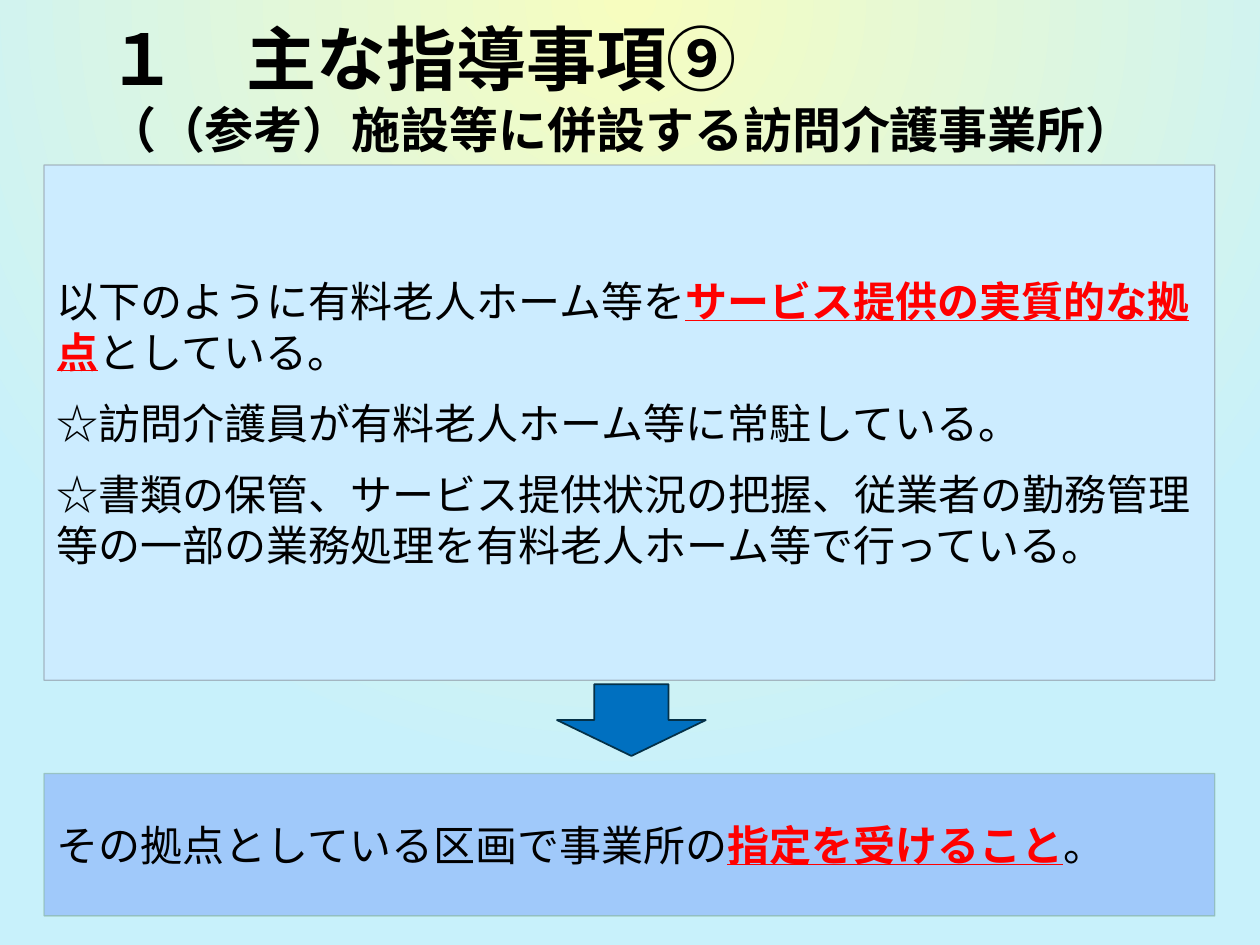
from pptx import Presentation
from pptx.dml.color import RGBColor
from pptx.enum.shapes import MSO_SHAPE as Shape
from pptx.enum.text import MSO_ANCHOR as Anchor, MSO_AUTO_SIZE as Fit, PP_ALIGN as Align
from pptx.oxml.ns import qn
from pptx.util import Pt
from lxml.etree import SubElement as sub

FONT = "League Spartan"
HEX = {
    "ink": "000000", "key": "FF0000",
    "glow": "F7FDBF", "sky": "C8F1FB",
    "pale": "CCECFF", "pale_edge": "89919C",
    "blue": "A0C9FA", "blue_edge": "8AB7A1",
    "arrow": "0070C0", "arrow_edge": "043148",
}
LEFT, WIDTH = 25.2, 669

# Each paragraph is a list of (text, is key phrase).
CAUSE = [
    [("以下のように有料老人ホーム等を", False),
     ("サービス提供の実質的な拠点", True),
     ("としている。", False)],
    [("☆訪問介護員が有料老人ホーム等に常駐している。", False)],
    [("☆書類の保管、サービス提供状況の把握、従業者の勤務管理"
      "等の一部の業務処理を有料老人ホーム等で行っている。", False)],
]
RULE = [
    [("その拠点としている区画で事業所の", False),
     ("指定を受けること", True),
     ("。", False)],
]


def color(name):
    return RGBColor.from_string(HEX[name])


def place(shape, x, y, w, h):
    shape.left, shape.top, shape.width, shape.height = Pt(x), Pt(y), Pt(w), Pt(h)


def add_run(para, text, size, bold=False, tint="ink", line=False):
    run = para.add_run()
    run.text = text
    font = run.font
    font.name, font.size, font.bold, font.underline = FONT, Pt(size), bold, line
    font.color.rgb = color(tint)
    sub(run._r.get_or_add_rPr(), qn("a:ea"), typeface=FONT)


def paint_back(slide):
    """Radial glow from the top edge of the slide."""
    fill = slide.background.fill
    fill.gradient()
    for stop, name in zip(fill.gradient_stops, ("glow", "sky")):
        stop.color.rgb = color(name)
    grad = next(slide.element.iter(qn("a:gradFill")))
    grad.remove(grad.find(qn("a:lin")))
    ring = sub(grad, qn("a:path"), path="circle")
    sub(ring, qn("a:fillToRect"), b="100000")


def set_title(slide):
    title = slide.shapes.title
    place(title, 54, 5.8, 640.8, 87.8)
    frame = title.text_frame
    frame.vertical_anchor, frame.auto_size = Anchor.MIDDLE, Fit.NONE
    para = frame.paragraphs[0]
    para.alignment = Align.LEFT
    add_run(para, "１\u3000主な指導事項⑨", 40, True)
    para.add_line_break()
    add_run(para, "（（参考）施設等に併設する訪問介護事業所）", 28, True)


def add_shape(slide, kind, box, fill, edge, width):
    shape = slide.shapes.add_shape(kind, *map(Pt, box))
    shape.shadow.inherit = False
    shape.fill.solid()
    shape.fill.fore_color.rgb = color(fill)
    shape.line.color.rgb = color(edge)
    shape.line.width = Pt(width)
    return shape


def add_panel(slide, y, h, fill, paras):
    panel = add_shape(slide, Shape.RECTANGLE, (LEFT, y, WIDTH, h), fill, fill + "_edge", 0.75)
    edge = panel.line._ln.find(".//" + qn("a:srgbClr"))
    sub(edge, qn("a:alpha"), val="60000")
    frame = panel.text_frame
    frame.word_wrap, frame.vertical_anchor = True, Anchor.MIDDLE
    for i, parts in enumerate(paras):
        para = frame.add_paragraph() if i else frame.paragraphs[0]
        para.alignment = Align.LEFT
        para.space_before = para.space_after = Pt(6)
        for text, key in parts:
            add_run(para, text, 24, key, "key" if key else "ink", key)


def main():
    deck = Presentation()
    deck.slide_width, deck.slide_height = Pt(720), Pt(540)
    slide = deck.slides.add_slide(deck.slide_layouts[5])
    paint_back(slide)
    set_title(slide)
    add_panel(slide, 94.3, 294.5, "pale", CAUSE)
    add_panel(slide, 442, 81.4, "blue", RULE)
    add_shape(slide, Shape.DOWN_ARROW, (318.3, 391, 85, 41), "arrow", "arrow_edge", 1)
    deck.save("out.pptx")


if __name__ == "__main__":
    main()
